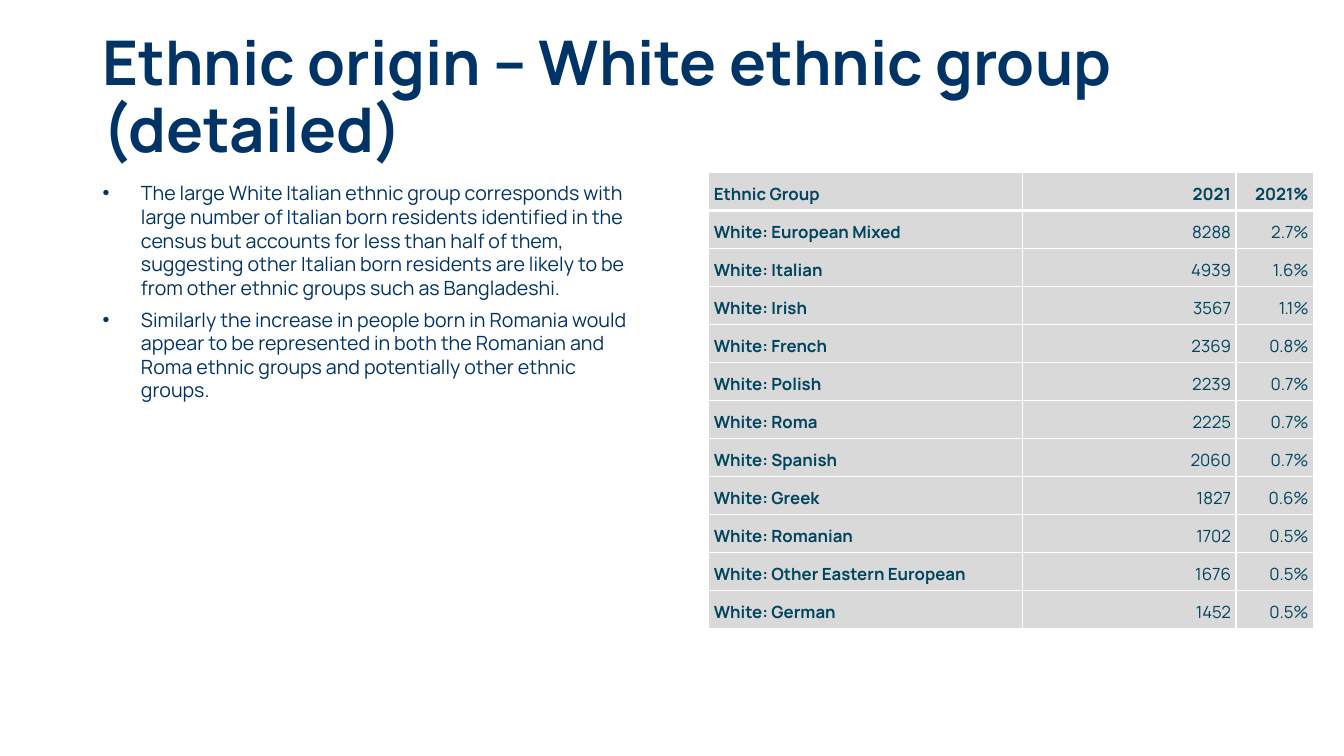
"""Build the slide on the detailed White ethnic groups."""
import pptx
import pptx.dml.color
import pptx.enum.text
import pptx.oxml
import pptx.oxml.ns
import pptx.util

Inches = pptx.util.Inches
Pt = pptx.util.Pt
RGBColor = pptx.dml.color.RGBColor
PP_ALIGN = pptx.enum.text.PP_ALIGN
MSO_ANCHOR = pptx.enum.text.MSO_ANCHOR

HEADING = "Ethnic origin – White ethnic group (detailed)"
FINDINGS = [
    "The large White Italian ethnic group corresponds with large number of Italian born residents "
    "identified in the census but accounts for less than half of them, suggesting other Italian born "
    "residents are likely to be from other ethnic groups such as Bangladeshi.",
    "Similarly the increase in people born in Romania would appear to be represented in both the "
    "Romanian and Roma ethnic groups and potentially other ethnic groups.",
]
ETHNIC_GROUPS = [
    ("Ethnic Group", "2021", "2021%"),
    ("White: European Mixed", "8288", "2.7%"),
    ("White: Italian", "4939", "1.6%"),
    ("White: Irish", "3567", "1.1%"),
    ("White: French", "2369", "0.8%"),
    ("White: Polish", "2239", "0.7%"),
    ("White: Roma", "2225", "0.7%"),
    ("White: Spanish", "2060", "0.7%"),
    ("White: Greek", "1827", "0.6%"),
    ("White: Romanian", "1702", "0.5%"),
    ("White: Other Eastern European", "1676", "0.5%"),
    ("White: German", "1452", "0.5%"),
]
COLUMN_WIDTHS = (3.11, 2.12, 0.77)
TABLE_HEIGHT = 4.53

FONT = "Manrope"
NAVY = RGBColor(0x00, 0x33, 0x66)
TEAL = RGBColor(0x00, 0x44, 0x5E)
GREY = RGBColor(0xD9, 0xD9, 0xD9)
WHITE = RGBColor(0xFF, 0xFF, 0xFF)


def add_text(paragraph, text, size, color, bold=False):
    run = paragraph.add_run()
    run.text = text
    run.font.name = FONT
    run.font.size = Pt(size)
    run.font.bold = bold
    run.font.color.rgb = color


def add_frame(slide, left, top, width, height):
    frame = slide.shapes.add_textbox(Inches(left), Inches(top), Inches(width), Inches(height)).text_frame
    frame.word_wrap = True
    return frame


def add_bullet(paragraph):
    properties = paragraph._p.get_or_add_pPr()
    properties.set("marL", str(Inches(0.38)))
    properties.set("indent", str(Inches(-0.38)))
    namespace = pptx.oxml.ns.nsdecls("a")
    properties.append(pptx.oxml.parse_xml(f'<a:buFont {namespace} typeface="Arial"/>'))
    properties.append(pptx.oxml.parse_xml(f'<a:buChar {namespace} char="•"/>'))


def set_borders(cell, widths):
    properties = cell._tc.get_or_add_tcPr()
    for position, (side, width) in enumerate(widths.items()):
        properties.insert(position, pptx.oxml.parse_xml(
            f'<a:{side} {pptx.oxml.ns.nsdecls("a")} w="{Pt(width)}">'
            f'<a:solidFill><a:srgbClr val="{WHITE}"/></a:solidFill></a:{side}>'))


def add_ethnic_table(slide):
    row_count = len(ETHNIC_GROUPS)
    table = slide.shapes.add_table(row_count, len(COLUMN_WIDTHS), Inches(7.03), Inches(1.71),
                                   Inches(sum(COLUMN_WIDTHS)), Inches(TABLE_HEIGHT)).table
    for column, width in zip(table.columns, COLUMN_WIDTHS):
        column.width = Inches(width)
    for r, group in enumerate(ETHNIC_GROUPS):
        table.rows[r].height = Inches(TABLE_HEIGHT / row_count)
        for c, value in enumerate(group):
            cell = table.cell(r, c)
            cell.fill.solid()
            cell.fill.fore_color.rgb = GREY
            cell.vertical_anchor = MSO_ANCHOR.BOTTOM
            cell.margin_left = cell.margin_right = Inches(0.05)
            cell.margin_top = cell.margin_bottom = Inches(0.05)
            set_borders(cell, {"lnL": 1, "lnR": 1, "lnT": 3 if r == 1 else 1, "lnB": 3 if r == 0 else 1})
            paragraph = cell.text_frame.paragraphs[0]
            paragraph.alignment = PP_ALIGN.RIGHT if c else PP_ALIGN.LEFT
            paragraph.line_spacing = 1.07
            paragraph.space_after = Pt(8)
            add_text(paragraph, value, 12, TEAL, bold=r == 0 or c == 0)


def main():
    presentation = pptx.Presentation()
    presentation.slide_width = Inches(13.33)
    presentation.slide_height = Inches(7.5)
    slide = presentation.slides.add_slide(presentation.slide_layouts[6])

    heading = add_frame(slide, 0.92, 0.26, 10.69, 1.45)
    heading.vertical_anchor = MSO_ANCHOR.MIDDLE
    heading.paragraphs[0].line_spacing = 0.9
    add_text(heading.paragraphs[0], HEADING, 44, NAVY, bold=True)

    findings = add_frame(slide, 0.92, 1.75, 5.56, 4.98)
    for i, finding in enumerate(FINDINGS):
        paragraph = findings.add_paragraph() if i else findings.paragraphs[0]
        add_bullet(paragraph)
        if i:
            paragraph.space_before = Pt(6)
        add_text(paragraph, finding, 14, NAVY)

    add_ethnic_table(slide)
    presentation.save("out.pptx")


if __name__ == "__main__":
    main()
